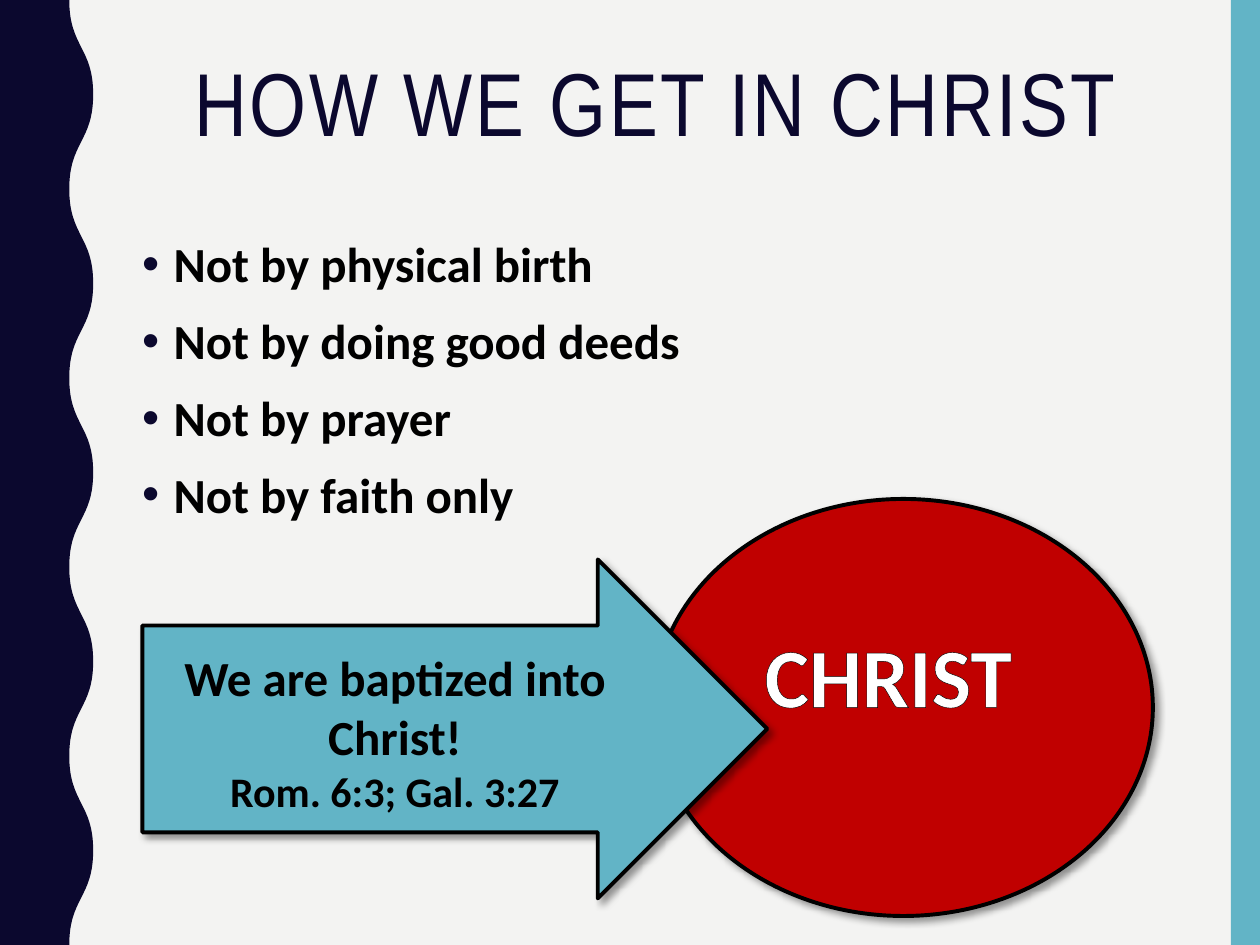
"""Build the slide "How we get in Christ"."""
from dataclasses import dataclass

from lxml import etree
from pptx import Presentation
from pptx import util as u
from pptx.dml.color import RGBColor
from pptx.enum import shapes, text
from pptx.oxml import ns


@dataclass(frozen=True)
class Theme:
    background: str = "F3F3F2"
    navy: str = "0B082E"
    teal: str = "62B4C6"
    red: str = "C00000"
    black: str = "000000"
    white: str = "FFFFFF"
    title_font: str = "Arial Narrow"
    body_font: str = "Calibri"
    title_size: int = 51
    label_size: int = 48
    body_size: int = 28
    verse_size: int = 24
    outline: float = 2.25


@dataclass(frozen=True)
class Area:
    left: float
    top: float
    width: float
    height: float

    def place(self) -> tuple[int, int, int, int]:
        return (int(self.left * WIDTH / 100), int(self.top * HEIGHT / 100),
                int(self.width * WIDTH / 100), int(self.height * HEIGHT / 100))


@dataclass(frozen=True)
class Figure:
    kind: int
    area: Area
    fill: str
    outlined: bool = True
    adjustments: tuple[float, ...] = ()


THEME = Theme()
WIDTH, HEIGHT = u.Inches(10), u.Inches(7.5)
BULLETS = ("Not by physical birth", "Not by doing good deeds",
           "Not by prayer", "Not by faith only")
FIGURES = (
    Figure(shapes.MSO_SHAPE.OVAL, Area(51.9, 52.8, 39.6, 44.13), THEME.red),
    Figure(shapes.MSO_SHAPE.RIGHT_ARROW, Area(11.3, 59.2, 49.6, 35.87),
           THEME.teal, adjustments=(0.61, 0.5)),
)


def add_element(parent, tag: str, **attributes: str):
    return etree.SubElement(parent, ns.qn(tag), attributes)


def add_color(parent, color: str):
    return add_element(add_element(parent, "a:solidFill"), "a:srgbClr", val=color)


def paint(shape, color: str) -> None:
    shape.shadow.inherit = False
    shape.fill.solid()
    shape.fill.fore_color.rgb = RGBColor.from_string(color)
    shape.line.fill.background()


def add_shadow(shape) -> None:
    effects = shape._element.spPr.find(ns.qn("a:effectLst"))
    shadow = add_element(effects, "a:outerShdw", blurRad=str(u.Pt(4)), dist=str(u.Pt(3)),
                         dir=str(45 * 60000), algn="tl", rotWithShape="0")
    add_element(add_element(shadow, "a:srgbClr", val=THEME.black), "a:alpha", val="40000")


def add_figure(slide, figure: Figure) -> None:
    shape = slide.shapes.add_shape(figure.kind, *figure.area.place())
    for index, value in enumerate(figure.adjustments):
        shape.adjustments[index] = value
    paint(shape, figure.fill)
    if figure.outlined:
        shape.line.color.rgb = RGBColor.from_string(THEME.black)
        shape.line.width = u.Pt(THEME.outline)
        add_shadow(shape)


def bend_lines(shape, count: int) -> None:
    lines = list(shape._element.iter(ns.qn("a:lnTo")))[:3 * count]
    for first in range(0, len(lines), 3):
        curve = etree.Element(ns.qn("a:cubicBezTo"))
        lines[first].addprevious(curve)
        for line in lines[first:first + 3]:
            curve.append(line[0])
            line.getparent().remove(line)


def add_wave(slide, near: float = 5.5, far: float = 7.4, halves: int = 10) -> None:
    points = []
    for half in range(halves, 0, -1):
        start, end = (near, far) if half % 2 == 0 else (far, near)
        points += [(start, half - 0.5), (end, half - 0.5), (end, half - 1)]
    points += [(0, 0), (0, halves)]
    scaled = [(int(x * WIDTH / 100), int(y * HEIGHT / halves)) for x, y in points]
    builder = slide.shapes.build_freeform(int(near * WIDTH / 100), HEIGHT)
    builder.add_line_segments(scaled, close=True)
    wave = builder.convert_to_shape()
    bend_lines(wave, halves)
    paint(wave, THEME.navy)


def add_bullet(paragraph) -> None:
    properties = paragraph._p.get_or_add_pPr()
    properties.set("marL", str(u.Inches(0.25)))
    properties.set("indent", str(u.Inches(-0.25)))
    add_element(add_element(properties, "a:buClr"), "a:srgbClr", val=THEME.navy)
    add_element(properties, "a:buFont", typeface="Arial")
    add_element(properties, "a:buChar", char="•")


def add_text(slide, area: Area, lines: tuple[str, ...], *, sizes: tuple[int, ...],
             color: str = THEME.black, font: str = THEME.body_font, bold: bool = True,
             centered: bool = False, bulleted: bool = False, line_spacing: float = 1,
             space_before: float = 0, tracking: float = 0, outline: float = 0) -> None:
    frame = slide.shapes.add_textbox(*area.place()).text_frame
    frame.word_wrap = True
    for index, line in enumerate(lines):
        paragraph = frame.add_paragraph() if index else frame.paragraphs[0]
        if bulleted:
            add_bullet(paragraph)
        paragraph.alignment = text.PP_ALIGN.CENTER if centered else text.PP_ALIGN.LEFT
        paragraph.line_spacing = line_spacing
        if index:
            paragraph.space_before = u.Pt(space_before)
        run = paragraph.add_run()
        run.text = line
        run.font.name, run.font.bold = font, bold
        run.font.size = u.Pt(sizes[min(index, len(sizes) - 1)])
        run.font.color.rgb = RGBColor.from_string(color)
        properties = run._r.get_or_add_rPr()
        if tracking:
            properties.set("spc", str(int(tracking * 100)))
        if outline:
            border = etree.Element(ns.qn("a:ln"), w=str(u.Pt(outline)))
            add_color(border, THEME.black)
            properties.insert(0, border)


def main() -> None:
    presentation = Presentation()
    presentation.slide_width, presentation.slide_height = WIDTH, HEIGHT
    slide = presentation.slides.add_slide(presentation.slide_layouts[6])
    slide.background.fill.solid()
    slide.background.fill.fore_color.rgb = RGBColor.from_string(THEME.background)

    add_figure(slide, Figure(shapes.MSO_SHAPE.RECTANGLE, Area(97.7, 0, 2.3, 100),
                             THEME.teal, outlined=False))
    add_wave(slide)
    add_text(slide, Area(10.3, 5.6, 83.5, 21.73), ("HOW WE GET IN CHRIST",),
             sizes=(THEME.title_size,), color=THEME.navy, font=THEME.title_font,
             bold=False, centered=True, line_spacing=0.9, tracking=1.5)
    add_text(slide, Area(10.3, 23.47, 83.5, 35.87), BULLETS, sizes=(THEME.body_size,),
             bulleted=True, line_spacing=1.1, space_before=7)
    for figure in FIGURES:
        add_figure(slide, figure)
    add_text(slide, Area(59.7, 65.33, 29, 12.13), ("CHRIST",),
             sizes=(THEME.label_size,), color=THEME.white, outline=0.75)
    add_text(slide, Area(13.5, 67.87, 35.7, 19.33),
             ("We are baptized into Christ!", "Rom. 6:3; Gal. 3:27"),
             sizes=(THEME.body_size, THEME.verse_size), centered=True)
    presentation.save("out.pptx")


if __name__ == "__main__":
    main()
